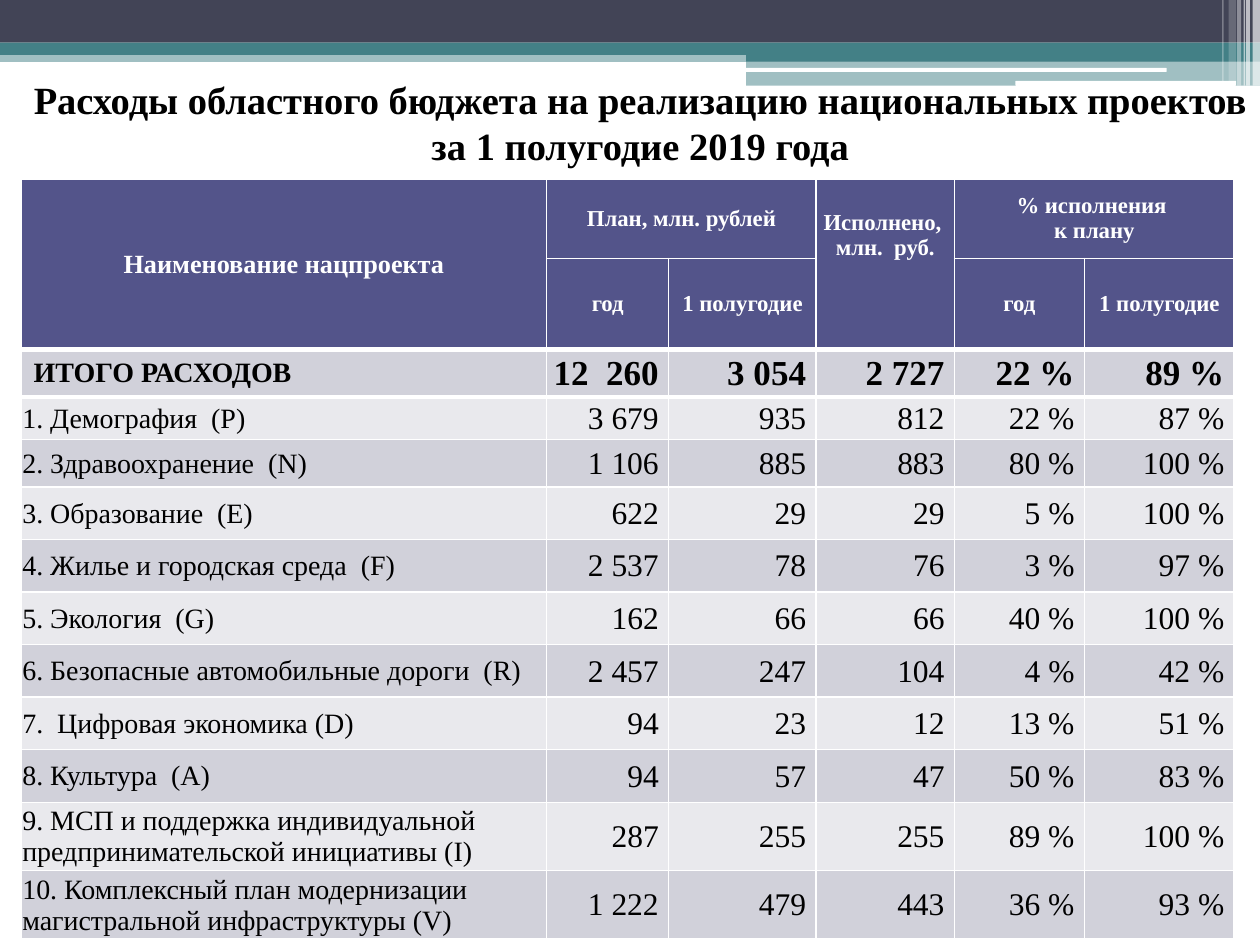
from typing import NamedTuple

from lxml.etree import SubElement
from pptx import Presentation
from pptx.dml.color import RGBColor
from pptx.enum.shapes import MSO_SHAPE as Shape
from pptx.enum.text import MSO_ANCHOR as Anchor, PP_ALIGN as Align
from pptx.oxml.ns import qn
from pptx.util import Cm, Pt

FONT = "Times New Roman"
WHITE, BLACK, NAVY, TEAL = "FFFFFF", "000000", "424456", "438086"
HEADER, DARK_ROW, LIGHT_ROW = "53548A", "D1D1DA", "E9E9ED"


class Band(NamedTuple):
    left: float
    top: float
    width: float
    height: float
    color: str
    opacity: int = 100
    outline: Shape = Shape.RECTANGLE


class Heading(NamedTuple):
    row: int
    col: int
    text: str
    last_row: int
    last_col: int
    size: float = 13
    margins: tuple = (0.05, 0.1, 0.05, 0.1)
    anchor: Anchor = Anchor.MIDDLE


class Project(NamedTuple):
    name: str
    values: tuple


BANDS = [
    Band(0, 1.02, 25.4, 0.23, TEAL, 50),
    Band(0, 0, 25.4, 0.86, NAVY),
    Band(0, 0.86, 25.4, 0.25, TEAL),
    Band(15.04, 0.99, 10.36, 0.25, TEAL),
    Band(15.04, 1.22, 10.36, 0.51, TEAL, 50),
    Band(15.01, 1.37, 8.51, 0.08, WHITE, outline=Shape.ROUNDED_RECTANGLE),
    Band(20.47, 1.63, 4.45, 0.1, WHITE, outline=Shape.ROUNDED_RECTANGLE),
    # Thin vertical stripes in the right corner
    Band(25.25, 0, 0.15, 1.73, WHITE, 65),
    Band(25.12, 0, 0.08, 1.73, WHITE, 65),
    Band(25.07, 0, 0.03, 1.73, WHITE, 60),
    Band(24.94, 0, 0.08, 1.73, WHITE, 40),
    Band(24.77, 0, 0.15, 1.63, WHITE, 20),
    Band(24.64, 0, 0.03, 1.63, WHITE, 30),
]

HEADINGS = [
    Heading(0, 0, "Наименование нацпроекта", 1, 0, 15, (0.25, 0.13, 0.25, 0.13)),
    Heading(0, 1, "План, млн. рублей", 0, 2),
    Heading(0, 3, "Исполнено, \nмлн.  руб.", 1, 3,
            margins=(0.05, 0.63, 0.05, 0.1), anchor=Anchor.TOP),
    Heading(0, 4, "% исполнения \nк плану", 0, 5),
    Heading(1, 1, "год", 1, 1),
    Heading(1, 2, "1 полугодие", 1, 2),
    Heading(1, 4, "год", 1, 4),
    Heading(1, 5, "1 полугодие", 1, 5),
]

PROJECTS = [
    Project("ИТОГО РАСХОДОВ", ("12  260", "3 054", "2 727", "22 %", "89 %")),
    Project("1. Демография  (P)", ("3 679", "935", "812", "22 %", "87 %")),
    Project("2. Здравоохранение  (N)", ("1 106", "885", "883", "80 %", "100 %")),
    Project("3. Образование  (E)", ("622", "29", "29", "5 %", "100 %")),
    Project("4. Жилье и городская среда  (F)", ("2 537", "78", "76", "3 %", "97 %")),
    Project("5. Экология  (G)", ("162", "66", "66", "40 %", "100 %")),
    Project("6. Безопасные автомобильные дороги  (R)",
            ("2 457", "247", "104", "4 %", "42 %")),
    Project("7.  Цифровая экономика (D)", ("94", "23", "12", "13 %", "51 %")),
    Project("8. Культура  (A)", ("94", "57", "47", "50 %", "83 %")),
    Project("9. МСП и поддержка индивидуальной предпринимательской инициативы (I)",
            ("287", "255", "255", "89 %", "100 %")),
    Project("10. Комплексный план модернизации магистральной инфраструктуры (V)",
            ("1 222", "479", "443", "36 %", "93 %")),
]

COLUMN_WIDTHS = [10.59, 2.46, 2.97, 2.79, 2.62, 3.02]
ROW_HEIGHTS = [1.6, 1.8, 0.96, 0.86, 0.95] + [1.06] * 6 + [1.37] * 2
HEADER_ROWS = 2
THICK_EDGES = (2, 3)  # rows with a heavy line above: the total and the first project


def paint(fill, color: str, opacity: int = 100) -> None:
    fill.solid()
    fill.fore_color.rgb = RGBColor.from_string(color)
    if opacity < 100:
        clr = fill._xPr.find(qn("a:solidFill"))[0]
        SubElement(clr, qn("a:alpha"), val=str(opacity * 1000))


def write(frame, text: str, *, size: float, color: str = BLACK,
          bold: bool = False, align: Align = Align.LEFT) -> None:
    frame.word_wrap = True
    for number, line in enumerate(text.split("\n")):
        paragraph = frame.add_paragraph() if number else frame.paragraphs[0]
        paragraph.alignment = align
        run = paragraph.add_run()
        run.text = line
        run.font.name, run.font.size, run.font.bold = FONT, Pt(size), bold
        run.font.color.rgb = RGBColor.from_string(color)


def draw_band(slide, band: Band) -> None:
    bar = slide.shapes.add_shape(band.outline, Cm(band.left), Cm(band.top),
                                 Cm(band.width), Cm(band.height))
    bar.shadow.inherit = False
    bar.line.fill.background()
    paint(bar.fill, band.color, band.opacity)


def style_cell(cell, color: str, top: float, bottom: float) -> None:
    properties = cell._tc.get_or_add_tcPr()
    for side, points in (("L", 1), ("R", 1), ("T", top), ("B", bottom)):
        edge = SubElement(properties, qn(f"a:ln{side}"), w=str(Pt(points)))
        SubElement(SubElement(edge, qn("a:solidFill")), qn("a:srgbClr"), val=WHITE)
    paint(cell.fill, color)


def set_margins(cell, margins: tuple, anchor: Anchor = Anchor.MIDDLE) -> None:
    (cell.margin_left, cell.margin_top,
     cell.margin_right, cell.margin_bottom) = map(Cm, margins)
    cell.vertical_anchor = anchor


def draw_table(slide) -> None:
    table = slide.shapes.add_table(
        len(ROW_HEIGHTS), len(COLUMN_WIDTHS), Cm(0.43), Cm(3.61),
        Cm(sum(COLUMN_WIDTHS)), Cm(sum(ROW_HEIGHTS))).table
    table.first_row = table.horz_banding = False
    for column, width in zip(table.columns, COLUMN_WIDTHS):
        column.width = Cm(width)
    for row, height in zip(table.rows, ROW_HEIGHTS):
        row.height = Cm(height)

    # Fills and borders
    for r in range(len(ROW_HEIGHTS)):
        color = HEADER if r < HEADER_ROWS else (LIGHT_ROW if r % 2 else DARK_ROW)
        top, bottom = (3 if edge in THICK_EDGES else 1 for edge in (r, r + 1))
        for c in range(len(COLUMN_WIDTHS)):
            style_cell(table.cell(r, c), color, top, bottom)

    # Column headings
    for heading in HEADINGS:
        cell = table.cell(heading.row, heading.col)
        if (heading.last_row, heading.last_col) != (heading.row, heading.col):
            cell.merge(table.cell(heading.last_row, heading.last_col))
        if heading.last_row > heading.row:
            style_cell_bottom = cell._tc.tcPr.find(qn("a:lnB"))
            style_cell_bottom.set("w", str(Pt(3)))
        set_margins(cell, heading.margins, heading.anchor)
        write(cell.text_frame, heading.text, size=heading.size, color=WHITE,
              bold=True, align=Align.CENTER)

    # Total and projects
    for r, project in enumerate(PROJECTS, HEADER_ROWS):
        total = r == HEADER_ROWS
        name = table.cell(r, 0)
        set_margins(name, (0.25, 0.13, 0.25, 0.13) if total else (0.02, 0.02, 0.02, 0))
        write(name.text_frame, project.name, size=16, bold=total)
        for c, value in enumerate(project.values, 1):
            amount = table.cell(r, c)
            set_margins(amount, (0.02, 0.02, 0.2, 0))
            write(amount.text_frame, value, size=20 if total else 18,
                  bold=total, align=Align.RIGHT)


def main() -> None:
    deck = Presentation()
    deck.slide_width, deck.slide_height = Cm(25.4), Cm(19.05)
    slide = deck.slides.add_slide(deck.slide_layouts[6])
    for band in BANDS:
        draw_band(slide, band)
    title = slide.shapes.add_textbox(Cm(0), Cm(1.4), Cm(25.81), Cm(2.13))
    write(title.text_frame,
          "Расходы областного бюджета на реализацию национальных проектов\n"
          " за 1 полугодие 2019 года ",
          size=22, bold=True, align=Align.CENTER)
    draw_table(slide)
    deck.save("out.pptx")


if __name__ == "__main__":
    main()
